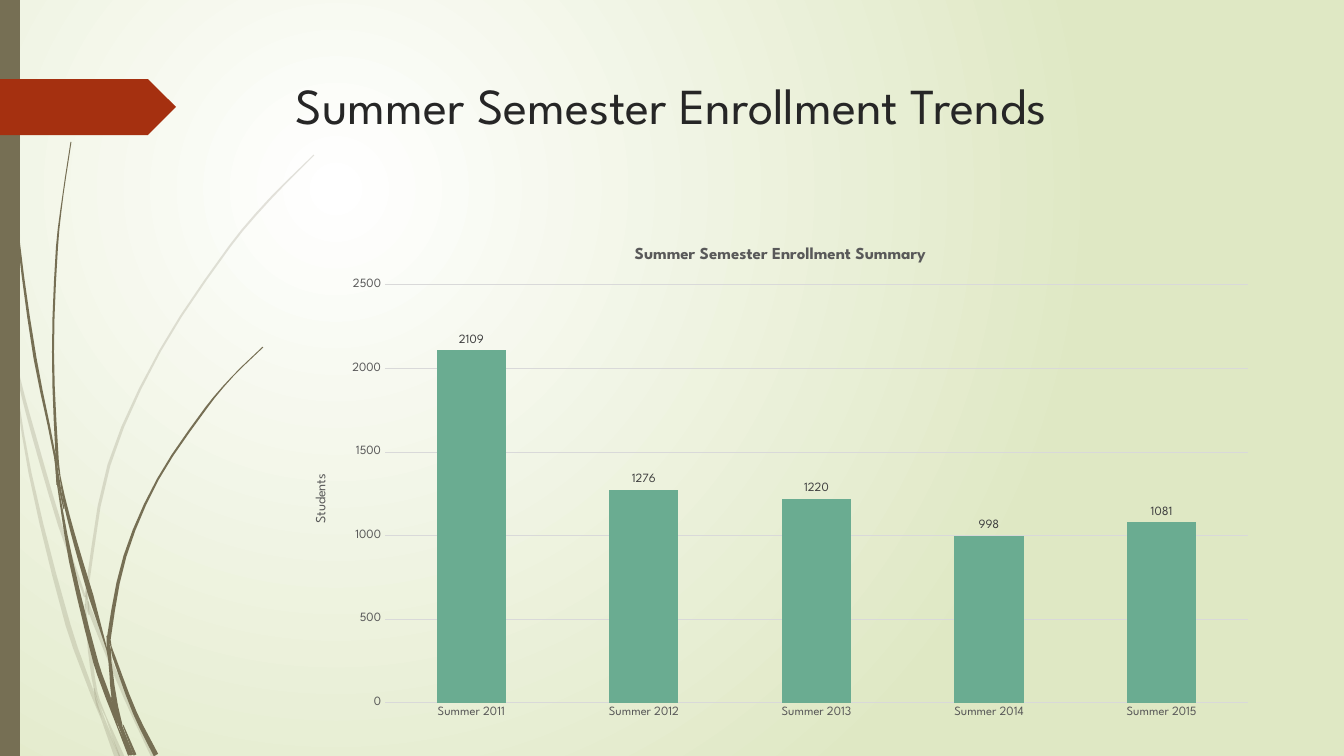
from math import hypot

from pptx import Presentation
from pptx.chart.data import CategoryChartData as ChartData
from pptx.dml.color import RGBColor as Rgb
from pptx.enum.chart import XL_CHART_TYPE as Kind, XL_LABEL_POSITION as Spot, XL_TICK_MARK as Tick
from pptx.enum.shapes import MSO_SHAPE as Form
from pptx.enum.text import MSO_ANCHOR as Anchor
from pptx.oxml import parse_xml
from pptx.oxml.ns import nsdecls, qn
from pptx.util import Pt

TITLE = "Summer Semester Enrollment Trends"
HEAD = "Summer Semester Enrollment Summary"
UNIT = "Students"
COUNTS = {
    "Summer 2011": 2109,
    "Summer 2012": 1276,
    "Summer 2013": 1220,
    "Summer 2014": 998,
    "Summer 2015": 1081,
}
FONT = "League Spartan"
HUES = {
    "white": "FFFFFF", "lime": "DFE8C4", "olive": "766F54", "rust": "A53010",
    "ink": "262626", "gray": "595959", "label": "404040", "grid": "D9D9D9",
    "bar": "6AAC91",
}
SIZE = (1344, 756)
STRIP = (0, 0, 20, 756)
FLAG = (0, 79, 176, 56)
TITLE_BOX = (286, 69, 983, 141)
CHART_BOX = (293, 228, 975, 500)
PLOT = (385, 285, 863, 418)

PALE = [
    [(0, 284, 1), (5, 320, 4), (11, 353, 1)],
    [(14, 348, 1), (19, 379, 3), (34, 436, 4), (60, 525, 4), (85, 597, 2)],
    [(88, 601, 1), (91, 613, 4), (126, 698, 4), (154, 757, 5)],
    [(106, 717, 1), (122, 757, 5)],
    [(11, 353, 1), (30, 473, 3), (68, 625, 5), (93, 695, 4), (102, 720, 1)],
    [(85, 604, 1), (90, 651, 4), (96, 692, 3), (106, 717, 1)],
    [(314, 155, 1), (270, 199, 2), (230, 246, 2), (160, 351, 2), (109, 465, 3),
     (87, 589, 3), (87, 600, 1)],
    [(102, 720, 1), (117, 757, 5)],
    [(86, 591, 1), (87, 604, 4), (89, 615, 1)],
    [(94, 688, 1), (98, 705, 3), (120, 757, 1)],
]
DARK = [
    [(4, 0, 1), (5, 48, 1), (8, 110, 1), (18, 235, 2), (35, 358, 3), (55, 457, 2), (57, 485, 1)],
    [(60, 476, 1), (65, 503, 3), (76, 545, 4), (91, 596, 5), (107, 650, 1)],
    [(111, 646, 1), (114, 657, 3), (135, 713, 4), (156, 755, 5)],
    [(57, 481, 1), (71, 561, 4), (96, 663, 5), (108, 697, 5), (118, 728, 1)],
    [(71, 142, 1), (63, 195, 1), (57, 247, 2), (53, 352, 2), (57, 455, 3), (60, 476, 1)],
    [(123, 725, 1), (135, 755, 3)],
    [(55, 453, 1), (58, 478, 3), (64, 509, 1)],
    [(263, 347, 1), (233, 376, 1), (206, 408, 2), (158, 479, 2), (125, 556, 3),
     (109, 637, 4), (111, 646, 1)],
    [(118, 728, 1), (130, 755, 4)],
    [(107, 650, 1), (110, 662, 3), (114, 697, 5), (122, 725, 1)],
    [(107, 636, 1), (109, 650, 4), (111, 661, 1)],
    [(111, 697, 1), (117, 717, 4), (132, 755, 3)],
]


def px(num):
    return round(num * 914400 / 100.8)


def rgb(name):
    return Rgb.from_string(HUES[name])


def style(font, size, hue, bold=False):
    font.name, font.size, font.bold = FONT, Pt(size), bold
    font.color.rgb = rgb(hue)


def paint(shape, hue):
    shape.shadow.inherit = False
    shape.fill.solid()
    shape.fill.fore_color.rgb = rgb(hue)
    shape.line.fill.background()


def smooth(pts, steps=3):
    ends = [pts[0], *pts, pts[-1]]
    lean = [(b[0] - a[0]) / (b[1] - a[1]) for a, b in zip(ends, ends[2:])]
    for a, b, m, n in zip(pts, pts[1:], lean, lean[1:]):
        (x, y, wide), (u, v, far) = a, b
        rise = v - y
        for i in range(steps):
            t = i / steps
            ease = t * t * (3 - 2 * t)
            bend = rise * t * (1 - t) * (m * (1 - t) - n * t)
            yield x + (u - x) * ease + bend, y + rise * t, wide + (far - wide) * t
    yield pts[-1]


def stem(shapes, pts, alpha):
    mid = list(smooth(pts))
    left, right = [], []
    for i, (x, y, wide) in enumerate(mid):
        a, b = mid[max(i - 1, 0)], mid[min(i + 1, len(mid) - 1)]
        dx, dy = b[0] - a[0], b[1] - a[1]
        half = wide / 2 / hypot(dx, dy)
        left.append((px(x - dy * half), px(y + dx * half)))
        right.append((px(x + dy * half), px(y - dx * half)))
    edge = left + right[::-1]
    pen = shapes.build_freeform(*edge[0], scale=1.0)
    pen.add_line_segments(edge[1:], close=True)
    blade = pen.convert_to_shape()
    paint(blade, "olive")
    if alpha < 100:
        hue = blade._element.spPr.find(qn("a:solidFill"))[0]
        hue.append(parse_xml(f'<a:alpha {nsdecls("a")} val="{alpha * 1000}"/>'))


def backdrop(slide):
    fill = slide.background.fill
    fill.gradient()
    for stop, hue in zip(fill.gradient_stops, ("white", "lime")):
        stop.color.rgb = rgb(hue)
    line = slide._element.find(".//" + qn("a:lin"))
    line.getparent().replace(line, parse_xml(
        f'<a:path {nsdecls("a")} path="circle">'
        '<a:fillToRect l="50000" t="50000" r="100000" b="100000"/></a:path>'))


def heading(shapes):
    frame = shapes.add_textbox(*map(px, TITLE_BOX)).text_frame
    frame.word_wrap = True
    frame.vertical_anchor = Anchor.TOP
    frame.text = TITLE
    style(frame.paragraphs[0].runs[0].font, 36, "ink")


def place(chart):
    x, y, w, h = CHART_BOX
    parts = zip("xywh", PLOT, (x, y, 0, 0), (w, h, w, h))
    spots = "".join(f'<c:{k} val="{(p - o) / n:.4f}"/>' for k, p, o, n in parts)
    area = chart._chartSpace.find(".//" + qn("c:plotArea"))
    for old in area.findall(qn("c:layout")):
        area.remove(old)
    area.insert(0, parse_xml(
        f'<c:layout {nsdecls("c")}><c:manualLayout><c:layoutTarget val="inner"/>'
        f'<c:xMode val="edge"/><c:yMode val="edge"/>{spots}</c:manualLayout></c:layout>'))


def caption(owner, text, size, bold):
    frame = owner.text_frame
    frame.text = text
    style(frame.paragraphs[0].runs[0].font, size, "gray", bold)


def trace(line):
    line.color.rgb = rgb("grid")
    line.width = Pt(0.75)


def graph(shapes):
    data = ChartData()
    data.categories = list(COUNTS)
    data.add_series("Series 1", list(COUNTS.values()))
    chart = shapes.add_chart(Kind.COLUMN_CLUSTERED, *map(px, CHART_BOX), data).chart
    chart.has_legend = False
    chart.font.name, chart.font.size = FONT, Pt(10)
    chart.has_title = True
    caption(chart.chart_title, HEAD, 12, True)
    chart.chart_title.include_in_layout = False

    cat, val = chart.category_axis, chart.value_axis
    for axis in (cat, val):
        axis.major_tick_mark = axis.minor_tick_mark = Tick.NONE
        style(axis.tick_labels.font, 9, "gray")
    trace(cat.format.line)
    val.format.line.fill.background()
    val.has_major_gridlines = True
    trace(val.major_gridlines.format.line)
    val.minimum_scale, val.maximum_scale, val.major_unit = 0, 2500, 500
    val.has_title = True
    caption(val.axis_title, UNIT, 10, False)

    plot = chart.plots[0]
    plot.gap_width, plot.vary_by_categories = 150, False
    bars = plot.series[0]
    bars.format.fill.solid()
    bars.format.fill.fore_color.rgb = rgb("bar")
    plot.has_data_labels = True
    tags = plot.data_labels
    tags.show_value, tags.position = True, Spot.OUTSIDE_END
    style(tags.font, 9, "label")
    place(chart)


def main():
    deck = Presentation()
    deck.slide_width, deck.slide_height = map(px, SIZE)
    slide = deck.slides.add_slide(deck.slide_layouts[6])
    shapes = slide.shapes
    backdrop(slide)
    for group, alpha in ((PALE, 20), (DARK, 100)):
        for pts in group:
            stem(shapes, pts, alpha)
    for form, box, hue in ((Form.RECTANGLE, STRIP, "olive"), (Form.PENTAGON, FLAG, "rust")):
        paint(shapes.add_shape(form, *map(px, box)), hue)
    heading(shapes)
    graph(shapes)
    deck.save("out.pptx")


if __name__ == "__main__":
    main()
